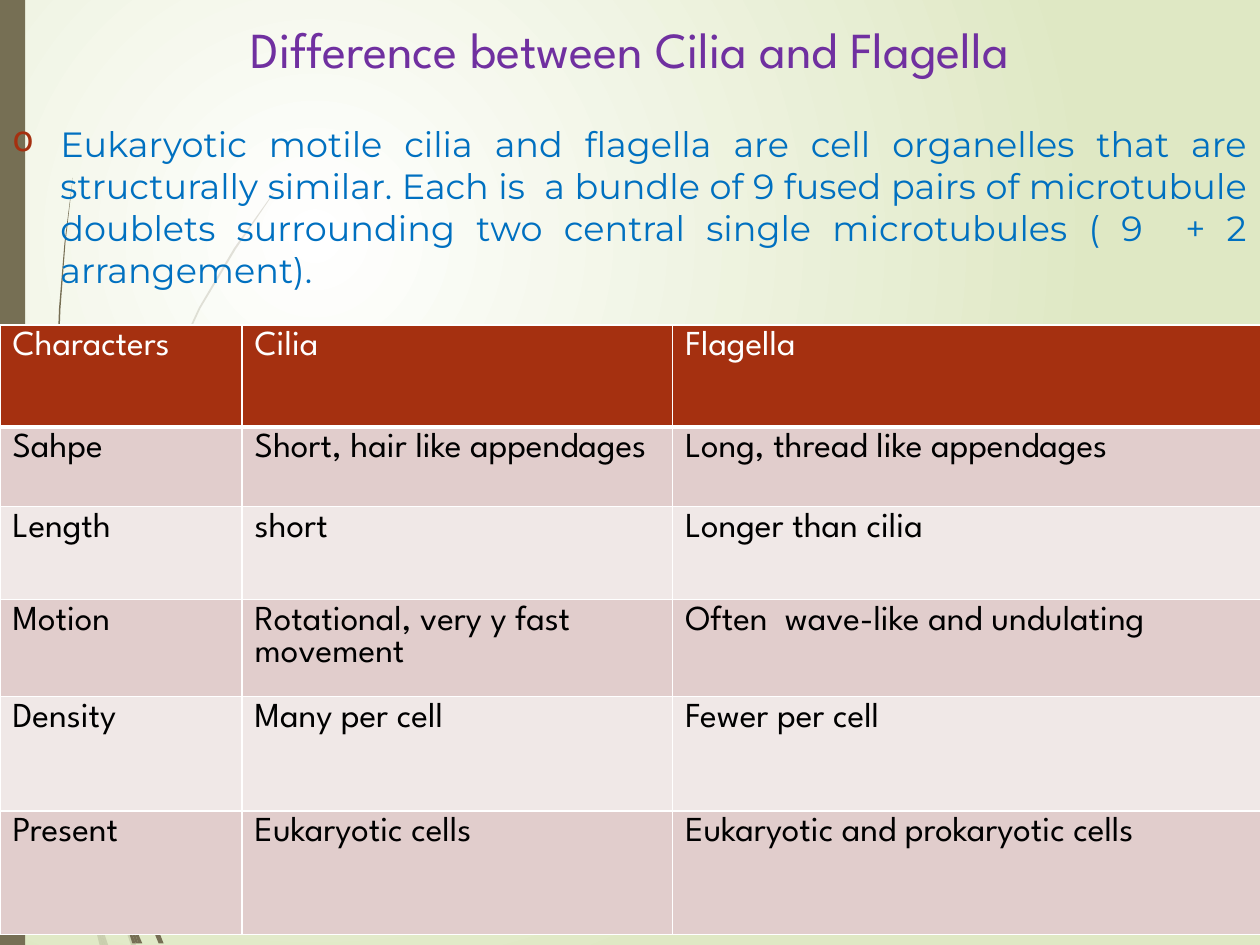
from lxml.etree import SubElement
from pptx import Presentation
from pptx.dml.color import RGBColor
from pptx.enum.shapes import MSO_SHAPE
from pptx.enum.text import MSO_ANCHOR as Anchor, PP_ALIGN as Align
from pptx.oxml.ns import qn
from pptx.util import Cm, Pt

WIDTH, HEIGHT = 25.4, 19.05
OLIVE, RUST, WHITE = "766F54", "A53010", "FFFFFF"
BANDS = ["E1CDCC", "F0E8E7"]
GRADIENT = [(0, WHITE), (1, "DFE8C4")]
GRADIENT_CENTRE = {"l": "50000", "t": "50000", "r": "100000", "b": "100000"}

TITLE = "Difference between Cilia and Flagella"
INTRO = (
    "Eukaryotic motile cilia and flagella are cell organelles that are structurally "
    "similar. Each is  a bundle of 9 fused pairs of microtubule doublets surrounding "
    "two central single microtubules ( 9  + 2 arrangement)."
)
ROWS = [
    ("Characters", "Cilia", "Flagella"),
    ("Sahpe", "Short, hair like appendages", "Long, thread like appendages"),
    ("Length", "short", "Longer than cilia"),
    ("Motion", "Rotational, very y fast movement", "Often  wave-like and undulating"),
    ("Density", "Many per cell", "Fewer per cell"),
    ("Present", "Eukaryotic cells", "Eukaryotic and prokaryotic cells"),
]
COLUMN_WIDTHS = [4.88, 8.68, 11.85]
ROW_HEIGHTS = [2.06, 1.6, 1.88, 1.88, 2.31, 2.49]
TABLE_TOP = 6.55

FONTS = {
    "title": {"name": "League Spartan", "size": Pt(28.8), "color": "7030A0"},
    "intro": {"name": "Montserrat", "size": Pt(20), "color": "0070C0"},
    "header": {"name": "League Spartan", "size": Pt(20), "bold": False, "color": WHITE},
    "body": {"name": "League Spartan", "size": Pt(20), "bold": False, "color": "000000"},
}

FAINT_WISPS = [
    [(1.55, 14.83), (1.93, 11.73), (2.82, 8.86), (4.04, 6.22), (4.75, 5.03), (5.51, 3.91),
     (5.51, 3.89), (4.72, 5), (4.01, 6.2), (2.79, 8.84), (1.91, 11.71), (1.5, 14.83)],
    [(1.55, 15.14), (1.63, 15.42), (2.24, 17.58), (2.74, 19.05), (2.64, 19.05),
     (2.16, 17.63), (1.55, 15.49)],
    [(1.85, 18.06), (2.18, 19.05), (2.11, 19.05)],
    [(1.78, 18.14), (2.08, 19.05), (2.01, 19.05)],
    [(1.65, 17.35), (1.7, 17.58), (1.85, 18.06), (2.11, 19.05), (2.08, 19.05), (1.78, 18.14)],
]
DARK_WISPS = [
    [(1.27, 11.99), (1.12, 8.86), (1.22, 6.22), (1.32, 4.9), (1.47, 3.58), (1.3, 4.9),
     (1.19, 6.22), (1.09, 8.86), (1.14, 11.4)],
    [(2.31, 16.28), (2.39, 16.48), (2.87, 17.93), (3.3, 19.02), (3.2, 19.02),
     (2.77, 17.98), (2.31, 16.66)],
    [(2.54, 18.26), (2.87, 19.02), (2.79, 19.02)],
    [(2.46, 18.34), (2.74, 19.02), (2.67, 19.02)],
    [(2.31, 17.55), (2.44, 17.93), (2.54, 18.26), (2.79, 19.02), (2.74, 19.02), (2.46, 18.34)],
]


def rgb(value):
    return RGBColor.from_string(value)


def format_font(font, values):
    for name, value in values.items():
        if name == "color":
            font.color.rgb = rgb(value)
        else:
            setattr(font, name, value)


def paint_background(slide):
    fill = slide.background.fill
    fill.gradient()
    for stop, (position, color) in zip(fill.gradient_stops, GRADIENT):
        stop.position = position
        stop.color.rgb = rgb(color)
    gradient = slide.element.find(".//" + qn("a:gradFill"))
    linear = gradient.find(qn("a:lin"))
    if linear is not None:
        gradient.remove(linear)
    circle = SubElement(gradient, qn("a:path"), path="circle")
    SubElement(circle, qn("a:fillToRect"), **GRADIENT_CENTRE)


def paint_shape(shape, color, opacity=100):
    shape.shadow.inherit = False
    shape.fill.solid()
    shape.fill.fore_color.rgb = rgb(color)
    shape.line.fill.background()
    if opacity < 100:
        tint = shape.element.spPr.find(".//" + qn("a:srgbClr"))
        SubElement(tint, qn("a:alpha"), val=str(opacity * 1000))


def add_wisp(slide, points, opacity):
    start, *others = [(Cm(x), Cm(y)) for x, y in points]
    builder = slide.shapes.build_freeform(*start)
    builder.add_line_segments(others, close=True)
    paint_shape(builder.convert_to_shape(), OLIVE, opacity)


def add_text(slide, top, height, text, font, align, anchor):
    box = slide.shapes.add_textbox(0, Cm(top), Cm(WIDTH), Cm(height))
    frame = box.text_frame
    frame.word_wrap = True
    frame.vertical_anchor = anchor
    paragraph = frame.paragraphs[0]
    paragraph.alignment = align
    run = paragraph.add_run()
    run.text = text
    format_font(run.font, FONTS[font])
    return paragraph


def add_bullet(paragraph, character, color):
    properties = paragraph._p.get_or_add_pPr()
    properties.set("marL", str(Cm(0.97)))
    properties.set("indent", str(Cm(-0.97)))
    SubElement(SubElement(properties, qn("a:buClr")), qn("a:srgbClr"), val=color)
    SubElement(properties, qn("a:buChar"), char=character)


def add_borders(cell, widths):
    properties = cell._tc.get_or_add_tcPr()
    for side, width in widths.items():
        line = SubElement(properties, qn("a:ln" + side), w=str(Pt(width)))
        SubElement(SubElement(line, qn("a:solidFill")), qn("a:srgbClr"), val=WHITE)


def add_comparison(slide):
    frame = slide.shapes.add_table(
        len(ROWS), len(COLUMN_WIDTHS), 0, Cm(TABLE_TOP),
        Cm(sum(COLUMN_WIDTHS)), Cm(sum(ROW_HEIGHTS)))
    table = frame.table
    table.first_row = table.horz_banding = False
    for column, width in zip(table.columns, COLUMN_WIDTHS):
        column.width = Cm(width)
    for index, (row, height, texts) in enumerate(zip(table.rows, ROW_HEIGHTS, ROWS)):
        row.height = Cm(height)
        header = index == 0
        for cell, text in zip(row.cells, texts):
            add_borders(cell, {"L": 1, "R": 1, "T": 1, "B": 3 if header else 1})
            cell.fill.solid()
            cell.fill.fore_color.rgb = rgb(RUST if header else BANDS[(index - 1) % 2])
            run = cell.text_frame.paragraphs[0].add_run()
            run.text = text
            format_font(run.font, FONTS["header" if header else "body"])


def main():
    presentation = Presentation()
    presentation.slide_width, presentation.slide_height = Cm(WIDTH), Cm(HEIGHT)
    slide = presentation.slides.add_slide(presentation.slide_layouts[6])
    paint_background(slide)
    for wisps, opacity in [(FAINT_WISPS, 20), (DARK_WISPS, 100)]:
        for points in wisps:
            add_wisp(slide, points, opacity)
    side_bar = slide.shapes.add_shape(MSO_SHAPE.RECTANGLE, 0, 0, Cm(0.51), Cm(HEIGHT))
    paint_shape(side_bar, OLIVE)
    add_text(slide, 0, 1.7, TITLE, "title", Align.CENTER, Anchor.BOTTOM)
    intro = add_text(slide, 2.34, 16.71, INTRO, "intro", Align.JUSTIFY, Anchor.TOP)
    add_bullet(intro, "o", RUST)
    add_comparison(slide)
    presentation.save("out.pptx")


if __name__ == "__main__":
    main()
